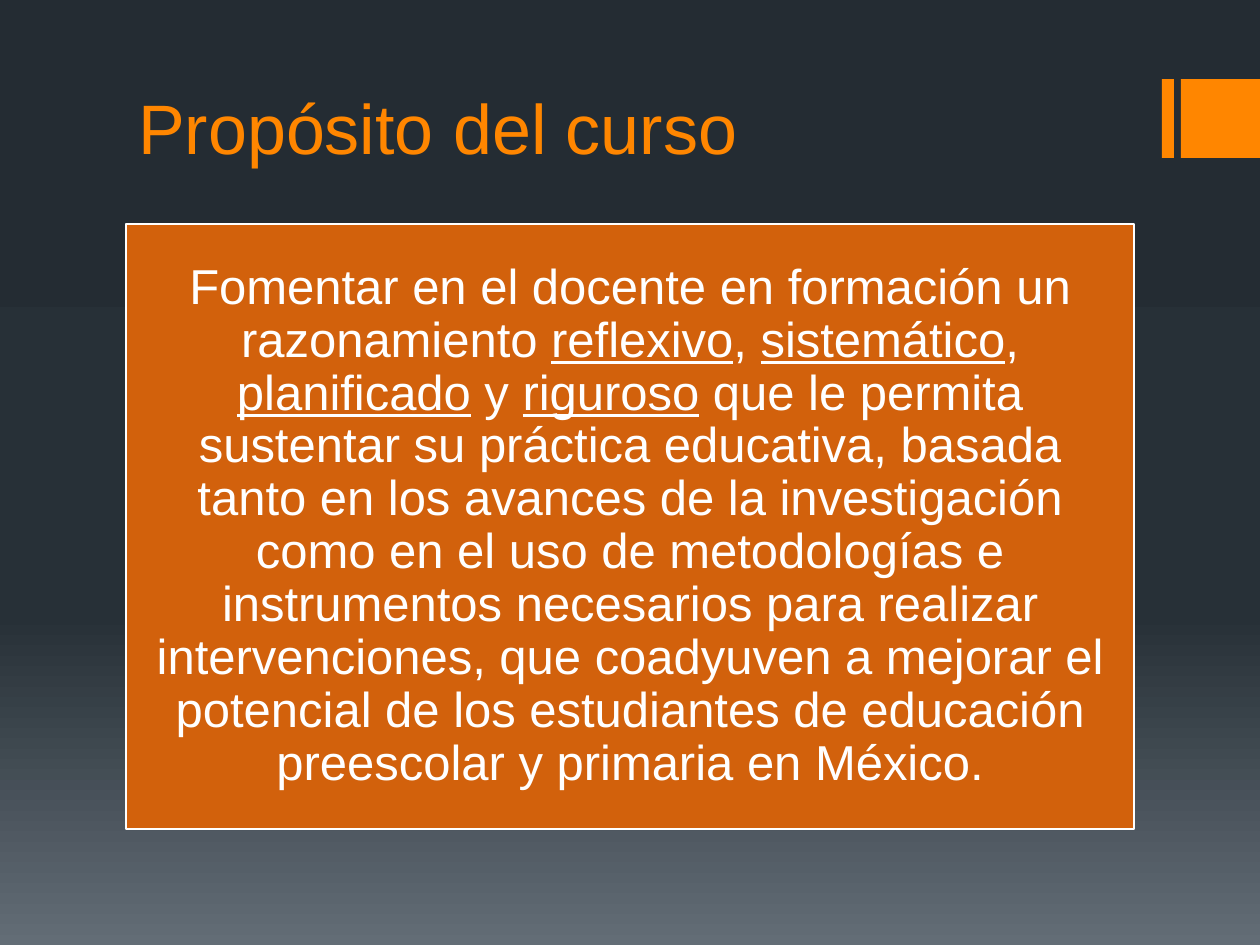
from copy import deepcopy

from pptx import Presentation
from pptx.dml.color import RGBColor
from pptx.enum.shapes import MSO_SHAPE
from pptx.enum.text import MSO_ANCHOR, PP_ALIGN
from pptx.oxml.ns import qn
from pptx.util import Pt

PX = 914400 / 126
FONT = "Arial"
COLORS = {
    "accent": "FF8600",
    "panel": "D2610C",
    "text": "FFFFFF",
    "sky": "242C33",
    "horizon": "273037",
    "ground": "636D76",
}
PURPOSE = [
    ("Fomentar en el docente en formación un razonamiento ", False),
    ("reflexivo", True),
    (", ", False),
    ("sistemático", True),
    (", ", False),
    ("planificado", True),
    (" y ", False),
    ("riguroso", True),
    (" que le permita sustentar su práctica educativa, basada tanto en los "
     "avances de la investigación como en el uso de metodologías e "
     "instrumentos necesarios para realizar intervenciones, que coadyuven a "
     "mejorar el potencial de los estudiantes de educación preescolar y "
     "primaria en México.", False),
]


def px(length):
    return round(length * PX)


def color(name):
    return RGBColor.from_string(COLORS[name])


def style_font(paragraph, size, color_name):
    paragraph.font.name = FONT
    paragraph.font.size = Pt(size)
    paragraph.font.color.rgb = color(color_name)


def add_block(slide, box, fill_name):
    block = slide.shapes.add_shape(MSO_SHAPE.RECTANGLE, *map(px, box))
    block.shadow.inherit = False
    block.fill.solid()
    block.fill.fore_color.rgb = color(fill_name)
    block.line.fill.background()
    return block


def paint_background(slide):
    fill = slide.background.fill
    fill.gradient()
    fill.gradient_angle = 270
    stop_list = next(slide.element.iter(qn("a:gsLst")))
    stop_list.insert(1, deepcopy(stop_list[0]))
    stops = [("sky", 0), ("horizon", 0.65), ("ground", 1)]
    for stop, (name, position) in zip(fill.gradient_stops, stops):
        stop.color.rgb = color(name)
        stop.position = position


def add_corner_mark(slide, box):
    left, top, width, height = box
    add_block(slide, (left, top, 12, height), "accent")
    add_block(slide, (left + width - height, top, height, height), "accent")


def add_title(slide, box):
    title = slide.shapes.add_textbox(*map(px, box)).text_frame
    title.word_wrap = True
    title.vertical_anchor = MSO_ANCHOR.BOTTOM
    title.text = "Propósito del curso"
    style_font(title.paragraphs[0], 40, "accent")


def add_purpose(slide, box):
    panel = add_block(slide, box, "panel")
    panel.line.color.rgb = color("text")
    panel.line.width = Pt(1.5)
    frame = panel.text_frame
    frame.word_wrap = True
    frame.vertical_anchor = MSO_ANCHOR.MIDDLE
    frame.margin_left = frame.margin_right = px(15)
    frame.margin_top = frame.margin_bottom = px(15)
    statement = frame.paragraphs[0]
    statement.alignment = PP_ALIGN.CENTER
    statement.line_spacing = 0.9
    style_font(statement, 28, "text")
    for words, underlined in PURPOSE:
        run = statement.add_run()
        run.text = words
        if underlined:
            run.font.underline = True


def main():
    presentation = Presentation()
    presentation.slide_width = px(1260)
    presentation.slide_height = px(945)
    slide = presentation.slides.add_slide(presentation.slide_layouts[6])
    paint_background(slide)
    add_corner_mark(slide, (1162, 79, 98, 79))
    add_title(slide, (126, 16, 1008, 159))
    add_purpose(slide, (126, 224, 1008, 605))
    presentation.save("out.pptx")


if __name__ == "__main__":
    main()
